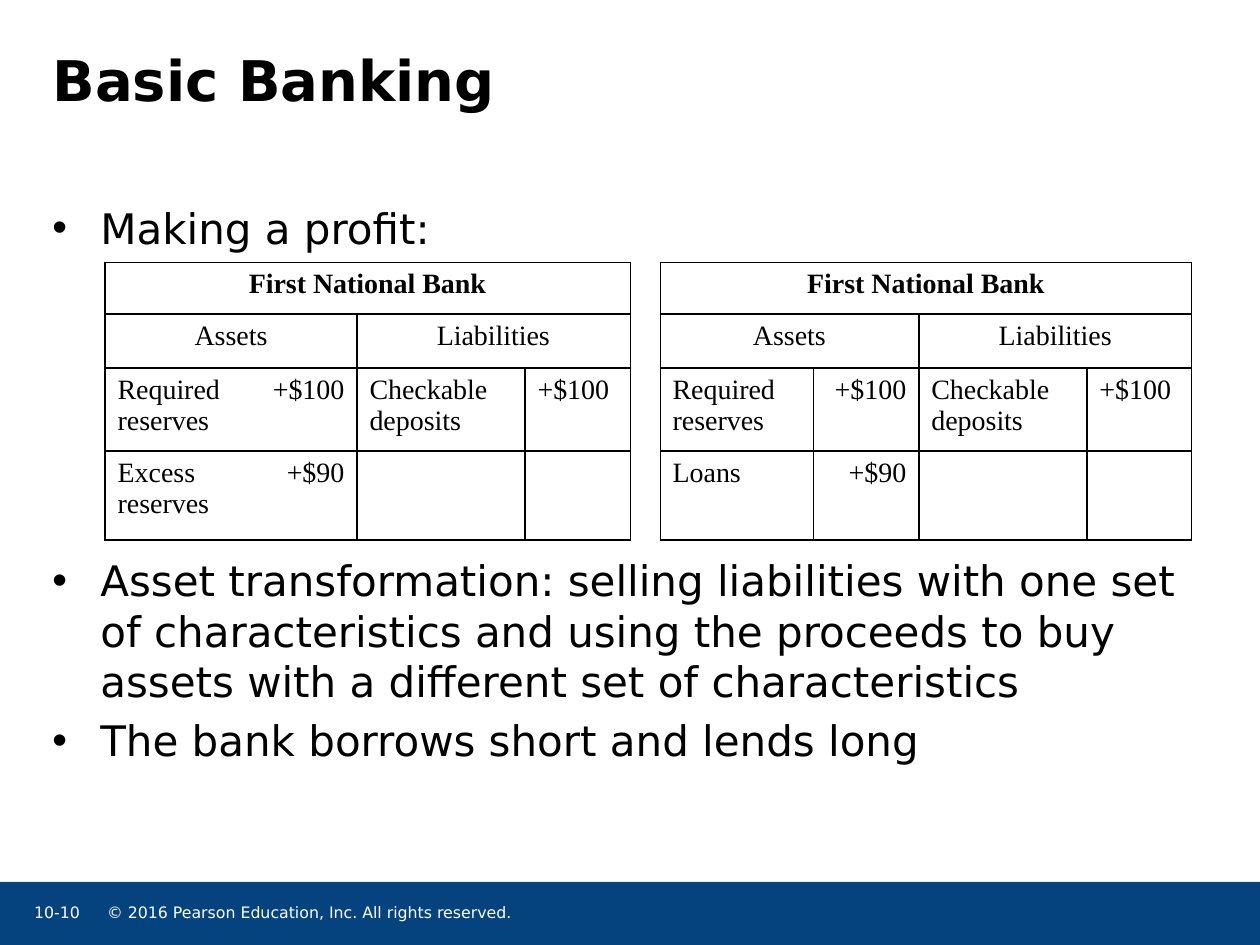
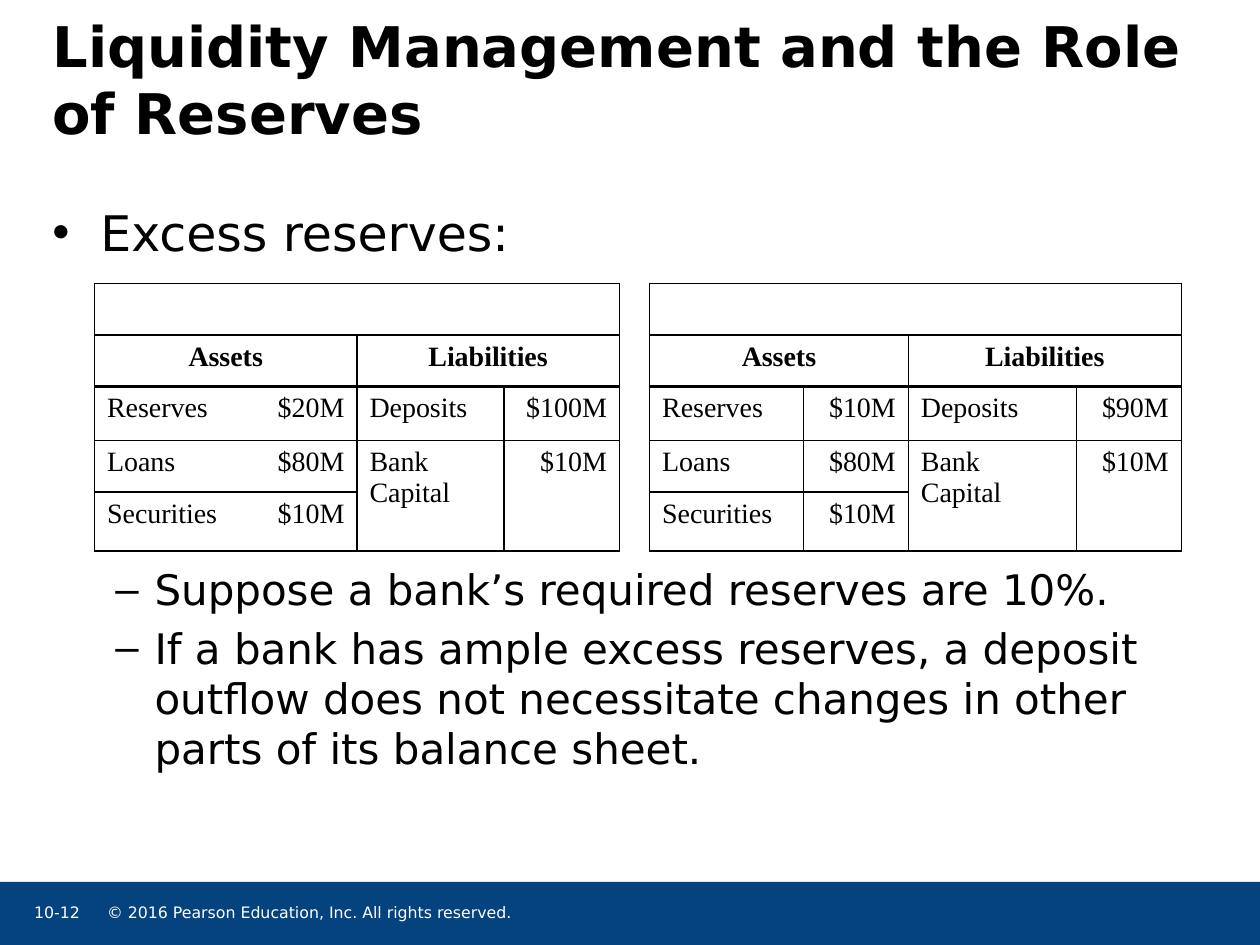
from lxml import etree
from pptx import Presentation, util as u
from pptx.dml.color import RGBColor
from pptx.enum import shapes, text
from pptx.oxml import ns

BLACK = RGBColor(0, 0, 0)
WHITE = RGBColor(255, 255, 255)
NAVY = RGBColor(0x04, 0x43, 0x7D)
SANS, SERIF = "DejaVu Sans", "Times New Roman"
COLS, ROWS = 24, 18
NO_STYLE = "{2D5ABB26-0587-4C30-8999-92F81FD0307C}"
ALIGN = {"l": text.PP_ALIGN.LEFT, "c": text.PP_ALIGN.CENTER,
         "r": text.PP_ALIGN.RIGHT}

# Text styles
TITLE = dict(name=SANS, size=u.Pt(32), bold=True)
BODY = dict(name=SANS, size=u.Pt(24), bold=False)
LEAD = dict(BODY, size=u.Pt(28))
CELL = dict(name=SERIF, size=u.Pt(16), bold=False)
HEAD = dict(CELL, bold=True)
FOOT = dict(name=SANS, size=u.Pt(9), bold=False)

# Bullets: sign, left margin and hanging indent in inches
DOT, DASH = ("•", 0.38, 0.38), ("–", 0.81, 0.31)
NEAR = 4.8  # points between bullets
SKIP = 172.8  # points left free for the table


def put(obj, vals):
    for key, val in vals.items():
        setattr(obj, key, val)


def add(par, tag, **vals):
    return etree.SubElement(par, ns.qn(tag), **vals)


class Deck:
    def __init__(self):
        self.prs = Presentation()
        put(self.prs, dict(slide_width=u.Inches(10), slide_height=u.Inches(7.5)))
        self.slide = None

    def box(self, x, y, w, h):
        """Turn grid columns and rows into lengths."""
        dx, dy = self.prs.slide_width / COLS, self.prs.slide_height / ROWS
        return [round(v) for v in (x * dx, y * dy, w * dx, h * dy)]

    def say(self, para, words, style, color=BLACK):
        run = para.add_run()
        run.text = words
        put(run.font, style)
        run.font.color.rgb = color

    def frame(self, shape, right=0):
        put(shape.text_frame, dict(
            word_wrap=True, margin_left=0, margin_top=0, margin_bottom=0,
            margin_right=right, auto_size=text.MSO_AUTO_SIZE.NONE))
        return shape.text_frame

    def label(self, words, *spot):
        area = self.frame(self.slide.shapes.add_textbox(*self.box(*spot)))
        self.say(area.paragraphs[0], words, FOOT, WHITE)

    def start(self, title, page):
        """Add a slide with its title and footer band."""
        self.slide = self.prs.slides.add_slide(self.prs.slide_layouts[5])
        head = self.slide.shapes.title
        put(head, dict(zip(("left", "top", "width", "height"),
                           self.box(1, 0, 22, 3))))
        area = self.frame(head)
        area.vertical_anchor = text.MSO_ANCHOR.MIDDLE
        para = area.paragraphs[0]
        para.alignment = ALIGN["l"]
        self.say(para, title, TITLE)

        band = self.slide.shapes.add_shape(
            shapes.MSO_SHAPE.RECTANGLE, *self.box(0, 16.8, COLS, 1.2))
        band.shadow.inherit = False
        band.fill.solid()
        band.fill.fore_color.rgb = NAVY
        band.line.fill.background()
        self.label("© 2016 Pearson Education, Inc. All rights reserved.",
                   2.04, 17.2, 14.16, 0.5)
        self.label(page, 0.65, 17.2, 0.95, 0.5)

    def bullets(self, items):
        """Items are (words, bullet, style); the table sits after the first."""
        area = self.frame(self.slide.shapes.add_textbox(
            *self.box(1, 3.85, 22, 12.15)), u.Inches(0.1))
        for i, (words, (sign, left, hang), style) in enumerate(items):
            para = area.add_paragraph() if i else area.paragraphs[0]
            prop = para._p.get_or_add_pPr()
            prop.set("marL", str(u.Inches(left)))
            prop.set("indent", str(-u.Inches(hang)))
            add(prop, "a:buFont", typeface="Arial")
            add(prop, "a:buChar", char=sign)
            para.space_before = u.Pt((0, SKIP)[i] if i < 2 else NEAR)
            self.say(para, words, style)

    def edges(self, cell, sides):
        """Draw cell borders from a dict of side and width in points."""
        prop = cell._tc.get_or_add_tcPr()
        for side in "LRTB":
            if side in sides:
                line = add(prop, "a:ln" + side, w=str(u.Pt(sides[side])))
                fill = add(line, "a:solidFill")
                add(fill, "a:srgbClr", val=str(BLACK))
        cell.fill.background()

    def sheets(self, x, y, wide, tall, halves, bold, aligns, gap):
        """Two balance sheets in one table; None joins the cell above."""
        spot = self.box(x, y, sum(wide), sum(tall))
        grid = self.slide.shapes.add_table(len(tall), len(wide), *spot).table
        put(grid, dict(first_row=False, horz_banding=False))
        grid._tbl.tblPr.find(ns.qn("a:tableStyleId")).text = NO_STYLE
        for col, w in zip(grid.columns, wide):
            col.width = self.box(0, 0, w, 0)[2]
        for row, h in zip(grid.rows, tall):
            row.height = self.box(0, 0, 0, h)[3]
        for r in range(len(tall)):
            grid.cell(r, 4).fill.background()
        grid.cell(gap, 4).merge(grid.cell(gap + 2, 4))
        for half, rows in enumerate(halves):
            for r, row in enumerate(rows):
                span = {0: 4, 1: 2}.get(r, 1)
                for i, words in enumerate(row):
                    c = i * span
                    self.entry(grid, r, c, half, span, words,
                               HEAD if r == bold else CELL,
                               "c" if r < 2 else aligns[c])

    def entry(self, grid, r, c, half, span, words, style, align):
        col = c + 5 * half
        cell = grid.cell(r, col)
        if words is None:
            grid.cell(r - 1, col).merge(cell)
            return
        if span > 1:
            cell.merge(grid.cell(r, col + span - 1))
        # Heavy rule under the headings, thin rules beside the gap
        sides = {"T": 1.5 if r == 2 else 1, "B": 1.5 if r == 1 else 1}
        if c % 2 == 0:
            sides["L"] = 0.5 if half and c == 0 else 1
        if (c + span) % 2 == 0:
            sides["R"] = 0.5 if not half and c + span == 4 else 1
        self.edges(cell, sides)
        para = cell.text_frame.paragraphs[0]
        para.alignment = ALIGN[align]
        if words:
            self.say(para, words, style)


def main():
    deck = Deck()
    names = ["Assets", "Liabilities"]

    # Making a profit
    deck.start("Basic Banking", "10-10")
    deck.bullets([
        ("Making a profit:", DOT, BODY),
        ("Asset transformation: selling liabilities with one set of "
         "characteristics and using the proceeds to buy assets with a "
         "different set of characteristics", DOT, BODY),
        ("The bank borrows short and lends long", DOT, BODY)])
    top = [["First National Bank"], names,
           ["Required reserves", "+$100", "Checkable deposits", "+$100"]]
    deck.sheets(2, 5, [2.8, 2, 3.2, 2, 0.55, 2.93, 2, 3.2, 2],
                [0.98, 1.03, 1.58, 1.7],
                [top + [[asset, "+$90", "", ""]]
                 for asset in ("Excess reserves", "Loans")],
                bold=0, aligns="lrll", gap=0)

    # Excess reserves
    deck.start("Liquidity Management and the Role of Reserves", "10-12")
    deck.bullets([
        ("Excess reserves:", DOT, LEAD),
        ("Suppose a bank’s required reserves are 10%.", DASH, BODY),
        ("If a bank has ample excess reserves, a deposit outflow does not "
         "necessitate changes in other parts of its balance sheet.",
         DASH, BODY)])
    base = [["Loans", "$80M", "Bank Capital", "$10M"],
            ["Securities", "$10M", None, None]]
    deck.sheets(1.8, 5.4, [3, 2, 2.8, 2.2, 0.55, 2.93, 2, 3.2, 2],
                [0.98, 0.98, 1.03, 0.98, 1.13],
                [[[""], names, ["Reserves", cash, "Deposits", debt]] + base
                 for cash, debt in (("$20M", "$100M"), ("$10M", "$90M"))],
                bold=1, aligns="lrlr", gap=1)

    deck.prs.save("out.pptx")


if __name__ == "__main__":
    main()
